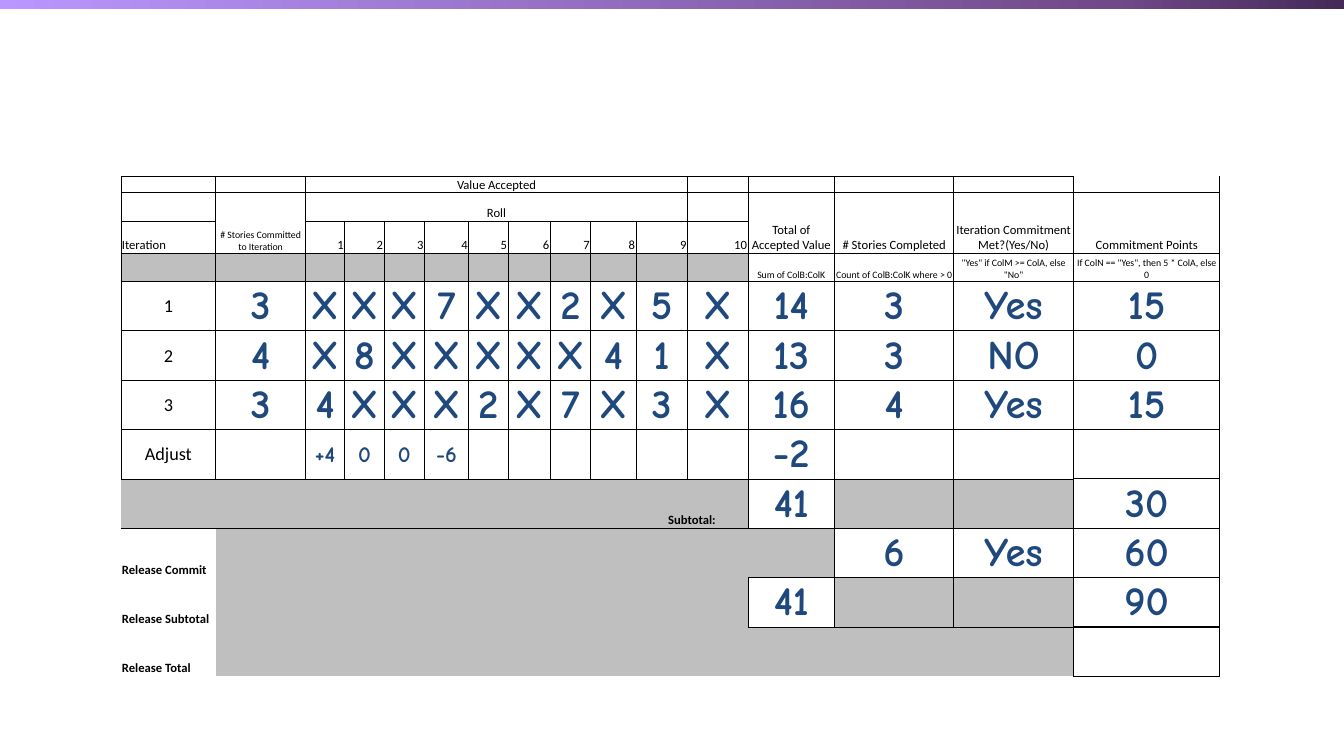
"""Build the iteration commitment score sheet slide."""
import copy

import lxml.etree
import pptx
import pptx.dml.color
import pptx.enum.shapes
import pptx.enum.text
import pptx.oxml.ns
import pptx.util

COLORS = {"black": "000000", "grey": "BFBFBF", "ink": "1F497D"}
BAR_STOPS = [(0, "442A58"), (0.17, "714989"), (1, "BA97FF")]
NO_TABLE_STYLE = "{2D5ABB26-0587-4C30-8999-92F81FD0307C}"
COLUMN_WIDTHS = [0.94, 0.89, 0.39, 0.39, 0.4, 0.44, 0.39, 0.42,
                 0.4, 0.45, 0.51, 0.6, 0.86, 1.18, 1.19, 1.45]
ROW_HEIGHTS = [0.16, 0.28, 0.32, 0.28] + [0.49] * 8
TABLE_LEFT, TABLE_TOP = 1.2, 1.75

HEADERS = {
    (0, 2): "Value Accepted",
    (1, 1): "# Stories Committed to Iteration",
    (1, 2): "Roll",
    (1, 12): "Total of Accepted Value",
    (1, 13): "# Stories Completed",
    (1, 14): "Iteration Commitment Met?(Yes/No)",
    (1, 15): "Commitment Points",
    (2, 0): "Iteration",
    (3, 12): "Sum of ColB:ColK",
    (3, 13): "Count of ColB:ColK where > 0",
    (3, 14): '"Yes" if ColM >= ColA, else "No"',
    (3, 15): 'If ColN == "Yes", then 5 * ColA, else 0',
}
ITERATIONS = [
    "1 3 X X X 7 X X 2 X 5 X 14 3 Yes 15",
    "2 4 X 8 X X X X X 4 1 X 13 3 NO 0",
    "3 3 4 X X X 2 X 7 X 3 X 16 4 Yes 15",
]
ADJUSTMENTS = {(7, 0): "Adjust", (7, 2): "+4", (7, 3): "0", (7, 4): "0",
               (7, 5): "-6", (7, 12): "-2"}
TOTAL_LABELS = {(8, 10): "Subtotal:", (9, 0): "Release Commit",
                (10, 0): "Release Subtotal", (11, 0): "Release Total"}
TOTALS = {(8, 12): "41", (8, 15): "30", (9, 13): "6", (9, 14): "Yes",
          (9, 15): "60", (10, 12): "41", (10, 15): "90"}

MERGES = [(0, 2, 0, 10), (1, 2, 1, 10), (1, 1, 2, 1), (8, 10, 8, 11)]
MERGES += [(1, column, 2, column) for column in range(12, 16)]
GREY_COLUMNS = {3: range(12), 8: [*range(12), 13, 14], 9: range(1, 13),
                10: [*range(1, 12), 13, 14], 11: range(1, 15)}
GREY = {(row, column) for row, columns in GREY_COLUMNS.items() for column in columns}
OPEN = {place for place in GREY if place[0] >= 8} | {(0, 15), (9, 0), (10, 0), (11, 0)}
BOXED = {(row, column) for row in range(12) for column in range(16)} - OPEN
HEAVY = {(8, 15), (10, 15), (11, 15)}
RULED = [{(10, column), (11, column)} for column in (13, 14)]


def table_texts():
    """Return the text of every filled cell by row and column."""
    texts = {**HEADERS, **ADJUSTMENTS, **TOTAL_LABELS, **TOTALS}
    texts.update({(2, roll + 1): str(roll) for roll in range(1, 11)})
    for row, values in enumerate(ITERATIONS, start=4):
        texts.update({(row, column): value for column, value in enumerate(values.split())})
    return texts


def text_format(row, column):
    """Return the text format that a cell's place calls for."""
    if (row, column) in TOTAL_LABELS:
        return {"bold": True, "align": "LEFT" if column == 0 else "CENTER"}
    if row >= 4 and column == 0:
        return {"size": 13, "anchor": "MIDDLE"}
    if row >= 4:
        size = 16 if row == 7 and column < 12 else 29
        return {"size": size, "font": "Comic Neue", "color": "ink",
                "bold": True, "anchor": "MIDDLE"}
    if row == 2:
        return {"align": "LEFT" if column == 0 else "RIGHT"}
    return {"size": 7 if row == 3 or (row, column) == (1, 1) else 9}


def write(cell, text, size=9, font="Calibri", color="black", bold=False,
          align="CENTER", anchor="BOTTOM"):
    """Put formatted text in a cell."""
    cell.margin_left = cell.margin_right = cell.margin_top = pptx.util.Inches(0.01)
    cell.margin_bottom = 0
    cell.vertical_anchor = pptx.enum.text.MSO_ANCHOR[anchor]
    paragraph = cell.text_frame.paragraphs[0]
    paragraph.alignment = pptx.enum.text.PP_ALIGN[align]
    if not text:
        end = lxml.etree.SubElement(paragraph._p, pptx.oxml.ns.qn("a:endParaRPr"))
        end.set("sz", "700")
        return
    run = paragraph.add_run()
    run.text = text
    run.font.size = pptx.util.Pt(size)
    run.font.name = font
    run.font.bold = bold
    run.font.color.rgb = pptx.dml.color.RGBColor.from_string(COLORS[color])


def edge_width(place, neighbour):
    """Return the width of the line between two places, or zero."""
    if HEAVY & {place, neighbour}:
        return 1
    return 0.5 if BOXED & {place, neighbour} or {place, neighbour} in RULED else 0


def draw_borders(cell, row, column, regions):
    """Draw the cell's lines, leaving out those inside a merged region."""
    region = regions.get((row, column))
    bottom, right = row, column
    if region and region[:2] == (row, column):
        bottom, right = region[2:]
    neighbours = {"L": (row, column - 1), "R": (row, right + 1),
                  "T": (row - 1, column), "B": (bottom + 1, column)}
    properties = cell._tc.get_or_add_tcPr()
    position = 0
    for side, neighbour in neighbours.items():
        width = edge_width((row, column), neighbour)
        if not width or (region and regions.get(neighbour) == region):
            continue
        line = lxml.etree.Element(pptx.oxml.ns.qn(f"a:ln{side}"), w=str(pptx.util.Pt(width)))
        fill = lxml.etree.SubElement(line, pptx.oxml.ns.qn("a:solidFill"))
        lxml.etree.SubElement(fill, pptx.oxml.ns.qn("a:srgbClr"), val=COLORS["black"])
        properties.insert(position, line)
        position += 1


def add_top_bar(slide):
    """Draw the gradient bar along the top edge."""
    bar = slide.shapes.add_shape(
        pptx.enum.shapes.MSO_SHAPE.RECTANGLE,
        *map(pptx.util.Inches, (-0.03, -0.02, 13.36, 0.11)))
    bar.shadow.inherit = False
    bar.line.fill.background()
    bar.fill.gradient()
    bar.fill.gradient_angle = 180
    stop_list = bar._element.spPr.find(".//" + pptx.oxml.ns.qn("a:gsLst"))
    stop_list.insert(1, copy.deepcopy(stop_list[0]))
    for stop, (position, color) in zip(bar.fill.gradient_stops, BAR_STOPS):
        stop.position = position
        stop.color.rgb = pptx.dml.color.RGBColor.from_string(color)


def add_score_sheet(slide):
    """Draw the score table."""
    sizes = (TABLE_LEFT, TABLE_TOP, sum(COLUMN_WIDTHS), sum(ROW_HEIGHTS))
    frame = slide.shapes.add_table(
        len(ROW_HEIGHTS), len(COLUMN_WIDTHS), *map(pptx.util.Inches, sizes))
    table = frame.table
    table.first_row = table.horz_banding = False
    table._tbl.tblPr.find(pptx.oxml.ns.qn("a:tableStyleId")).text = NO_TABLE_STYLE
    for column, width in zip(table.columns, COLUMN_WIDTHS):
        column.width = pptx.util.Inches(width)
    for row, height in zip(table.rows, ROW_HEIGHTS):
        row.height = pptx.util.Inches(height)
    regions = {}
    for region in MERGES:
        top, left, bottom, right = region
        table.cell(top, left).merge(table.cell(bottom, right))
        regions.update({(row, column): region for row in range(top, bottom + 1)
                        for column in range(left, right + 1)})
    texts = table_texts()
    for row in range(len(ROW_HEIGHTS)):
        for column in range(len(COLUMN_WIDTHS)):
            cell = table.cell(row, column)
            if (row, column) in GREY:
                cell.fill.solid()
                cell.fill.fore_color.rgb = pptx.dml.color.RGBColor.from_string(COLORS["grey"])
            else:
                cell.fill.background()
            write(cell, texts.get((row, column), ""), **text_format(row, column))
            draw_borders(cell, row, column, regions)


def main():
    """Build and save the presentation."""
    presentation = pptx.Presentation()
    presentation.slide_width = pptx.util.Inches(13.33)
    presentation.slide_height = pptx.util.Inches(7.5)
    slide = presentation.slides.add_slide(presentation.slide_layouts[6])
    add_top_bar(slide)
    add_score_sheet(slide)
    presentation.save("out.pptx")


if __name__ == "__main__":
    main()
